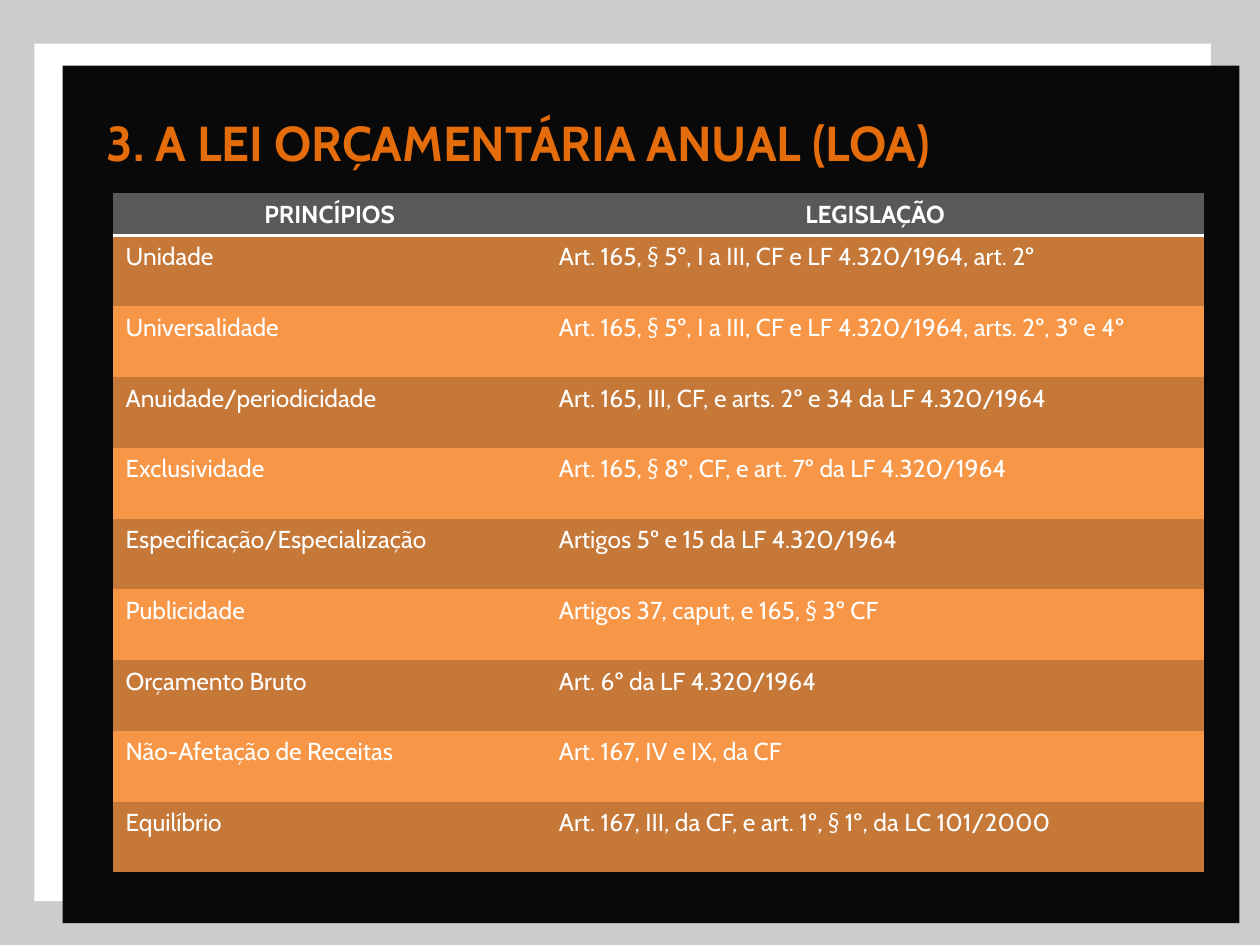
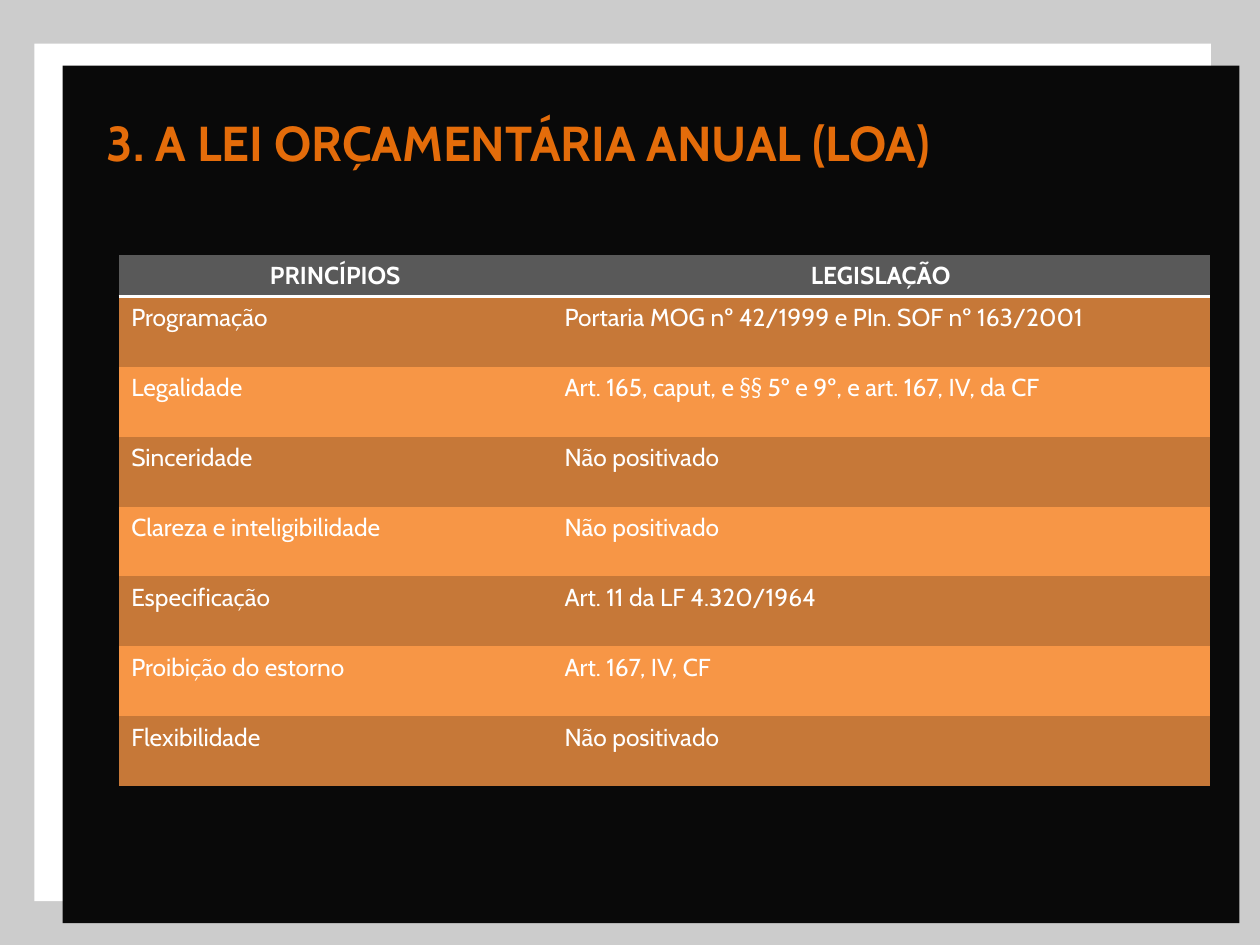
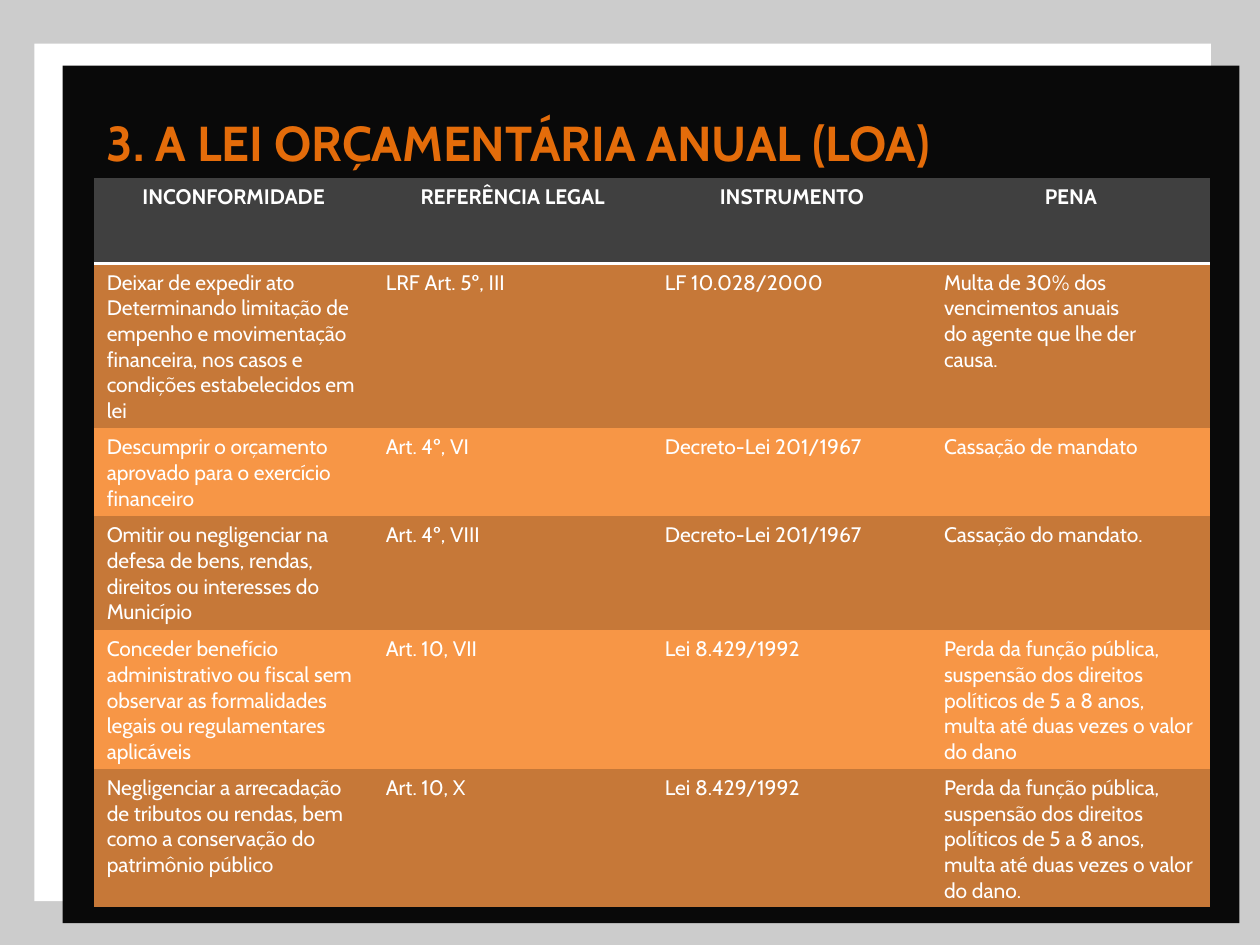
"""Build three slides on the annual budget law, each a titled table."""
from dataclasses import dataclass
from typing import Optional

from lxml import etree
from pptx import Presentation
from pptx import util as u
from pptx.dml import color
from pptx.enum import shapes, text
from pptx.oxml import ns

Pt = u.Pt
TITLE = "3. A LEI ORÇAMENTÁRIA ANUAL (LOA)"
PLAIN_TABLE_STYLE = "{2D5ABB26-0587-4C30-8999-92F81FD0307C}"


@dataclass(frozen=True)
class Theme:
    font: str = "Cabin"
    black: str = "000000"
    white: str = "FFFFFF"
    panel: str = "090909"
    title: str = "E46C0A"
    header: str = "595959"
    dark_header: str = "404040"
    bands: tuple[str, str] = ("C67838", "F79646")
    title_size: float = 28
    table_size: float = 14
    small_size: float = 12
    rule_width: float = 2


THEME = Theme()


@dataclass(frozen=True)
class Panel:
    left: float
    top: float
    width: float
    height: float
    fill: str
    opacity: Optional[int] = None


@dataclass(frozen=True)
class TableSpec:
    left: float
    top: float
    column_widths: tuple[float, ...]
    row_heights: tuple[float, ...]
    rows: tuple[tuple[str, ...], ...]
    header_fill: str = THEME.header
    size: float = THEME.table_size


PANELS = (
    Panel(0, 0, 720, 540, THEME.black, opacity=20),
    Panel(19.6, 25, 672.4, 490, THEME.white),
    Panel(35.8, 37.6, 672.4, 490, THEME.panel),
)

PRINCIPLES_HEADER = ("PRINCÍPIOS", "LEGISLAÇÃO")
PRINCIPLES_WIDTHS = (247.6, 375.8)

TABLES = (
    TableSpec(64.6, 110.3, PRINCIPLES_WIDTHS, (24.4,) + (40.45,) * 9, (
        PRINCIPLES_HEADER,
        ("Unidade", "Art. 165, § 5º, I a III, CF e LF 4.320/1964, art. 2º"),
        ("Universalidade", "Art. 165, § 5º, I a III, CF e LF 4.320/1964, arts. 2º, 3º e 4º"),
        ("Anuidade/periodicidade", "Art. 165, III, CF, e arts. 2º e 34 da LF 4.320/1964"),
        ("Exclusividade", "Art. 165, § 8º, CF, e art. 7º da LF 4.320/1964"),
        ("Especificação/Especialização", "Artigos 5º e 15 da LF 4.320/1964"),
        ("Publicidade", "Artigos 37, caput, e 165, § 3º CF"),
        ("Orçamento Bruto", "Art. 6º da LF 4.320/1964"),
        ("Não-Afetação de Receitas", "Art. 167, IV e IX, da CF"),
        ("Equilíbrio", "Art. 167, III, da CF, e art. 1º, § 1º, da LC 101/2000"),
    )),
    TableSpec(67.8, 145.6, PRINCIPLES_WIDTHS, (24,) + (39.95,) * 7, (
        PRINCIPLES_HEADER,
        ("Programação", "Portaria MOG nº 42/1999 e PIn. SOF nº 163/2001"),
        ("Legalidade", "Art. 165, caput, e §§ 5º e 9º, e art. 167, IV, da CF"),
        ("Sinceridade", "Não positivado"),
        ("Clareza e inteligibilidade", "Não positivado"),
        ("Especificação", "Art. 11 da LF 4.320/1964"),
        ("Proibição do estorno", "Art. 167, IV, CF"),
        ("Flexibilidade", "Não positivado"),
    )),
    TableSpec(53.8, 101.7, (159.5,) * 4, (48.9, 94, 50.3, 65.1, 78.9, 79.2), (
        ("INCONFORMIDADE", "REFERÊNCIA LEGAL", "INSTRUMENTO", "PENA"),
        ("Deixar de expedir ato\nDeterminando limitação de empenho e movimentação "
         "financeira, nos casos e condições estabelecidos em lei",
         "LRF Art. 5º, III", "LF 10.028/2000",
         "Multa de 30% dos\nvencimentos anuais\ndo agente que lhe der\ncausa."),
        ("Descumprir o orçamento\naprovado para o exercício\nfinanceiro",
         "Art. 4º, VI", "Decreto-Lei 201/1967", "Cassação de mandato"),
        ("Omitir ou negligenciar na\ndefesa de bens, rendas,\ndireitos ou interesses do\nMunicípio",
         "Art. 4º, VIII", "Decreto-Lei 201/1967", "Cassação do mandato."),
        ("Conceder benefício administrativo ou fiscal sem observar as formalidades "
         "legais ou regulamentares aplicáveis",
         "Art. 10, VII", "Lei 8.429/1992",
         "Perda da função pública, suspensão dos direitos políticos de 5 a 8 anos, "
         "multa até duas vezes o valor do dano"),
        ("Negligenciar a arrecadação de tributos ou rendas, bem como a conservação "
         "do patrimônio público",
         "Art. 10, X", "Lei 8.429/1992",
         "Perda da função pública, suspensão dos direitos políticos de 5 a 8 anos, "
         "multa até duas vezes o valor do dano."),
    ), header_fill=THEME.dark_header, size=THEME.small_size),
)


def set_fill(target, hex_color: str) -> None:
    target.fill.solid()
    target.fill.fore_color.rgb = color.RGBColor.from_string(hex_color)


def write_text(frame, content: str, *, size: float, fill: str = THEME.white,
               bold: bool = False, centered: bool = False) -> None:
    frame.word_wrap = True
    frame.text = content
    for paragraph in frame.paragraphs:
        paragraph.alignment = text.PP_ALIGN.CENTER if centered else text.PP_ALIGN.LEFT
        for run in paragraph.runs:
            run.font.name = THEME.font
            run.font.size = Pt(size)
            run.font.bold = bold
            run.font.color.rgb = color.RGBColor.from_string(fill)


def draw_panel(slide, panel: Panel) -> None:
    shape = slide.shapes.add_shape(shapes.MSO_SHAPE.RECTANGLE, Pt(panel.left), Pt(panel.top),
                                   Pt(panel.width), Pt(panel.height))
    shape.shadow.inherit = False
    shape.line.fill.background()
    set_fill(shape, panel.fill)
    if panel.opacity is not None:
        fill_color = shape._element.spPr.find(".//" + ns.qn("a:srgbClr"))
        etree.SubElement(fill_color, ns.qn("a:alpha"), val=str(panel.opacity * 1000))


def draw_title(slide) -> None:
    box = slide.shapes.add_textbox(Pt(54), Pt(60.5), Pt(559.5), Pt(41))
    write_text(box.text_frame, TITLE, size=THEME.title_size, fill=THEME.title, bold=True)


def add_bottom_rule(cell) -> None:
    line = etree.Element(ns.qn("a:lnB"), w=str(Pt(THEME.rule_width)))
    solid = etree.SubElement(line, ns.qn("a:solidFill"))
    etree.SubElement(solid, ns.qn("a:srgbClr"), val=THEME.white)
    cell._tc.get_or_add_tcPr().insert(0, line)


def draw_table(slide, spec: TableSpec) -> None:
    frame = slide.shapes.add_table(len(spec.rows), len(spec.column_widths), Pt(spec.left),
                                   Pt(spec.top), Pt(sum(spec.column_widths)),
                                   Pt(sum(spec.row_heights)))
    table = frame.table
    frame._element.find(".//" + ns.qn("a:tableStyleId")).text = PLAIN_TABLE_STYLE
    for column, width in zip(table.columns, spec.column_widths):
        column.width = Pt(width)
    for row_index, (row, height) in enumerate(zip(table.rows, spec.row_heights)):
        row.height = Pt(height)
        is_header = row_index == 0
        fill = spec.header_fill if is_header else THEME.bands[(row_index - 1) % 2]
        for cell, content in zip(row.cells, spec.rows[row_index]):
            set_fill(cell, fill)
            write_text(cell.text_frame, content, size=spec.size,
                       bold=is_header, centered=is_header)
            if is_header:
                add_bottom_rule(cell)


def main() -> None:
    presentation = Presentation()
    presentation.slide_width, presentation.slide_height = Pt(720), Pt(540)
    for spec in TABLES:
        slide = presentation.slides.add_slide(presentation.slide_layouts[6])
        for panel in PANELS:
            draw_panel(slide, panel)
        draw_title(slide)
        draw_table(slide, spec)
    presentation.save("out.pptx")


if __name__ == "__main__":
    main()
